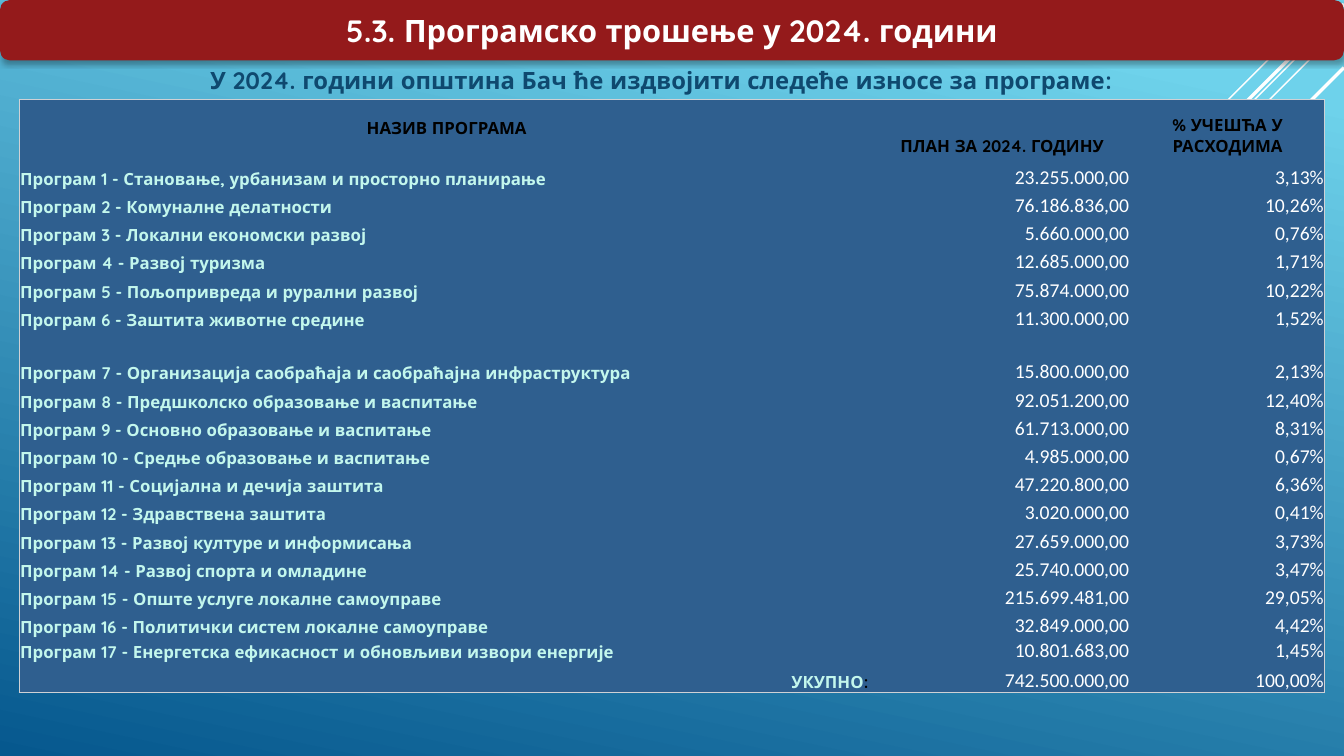
from typing import NamedTuple

from lxml.etree import SubElement
from pptx import Presentation
from pptx.dml.color import RGBColor
from pptx.enum.shapes import MSO_CONNECTOR, MSO_SHAPE
from pptx.enum.text import MSO_ANCHOR, PP_ALIGN
from pptx.oxml import parse_xml
from pptx.oxml.ns import nsdecls, qn
from pptx.util import Inches, Pt

COLORS = {
    "sky": "6ED2EB", "deep": "06588E", "banner": "941A1B", "subtitle": "0F496F",
    "table": "2F5F8F", "border": "CFD1D5", "mint": "C3F7ED",
    "white": "FFFFFF", "black": "000000",
}


class Style(NamedTuple):
    size: float
    color: str
    font: str = "Quicksand"
    bold: bool = True


class Ray(NamedTuple):
    """A 45-degree line running down and to the left."""
    x: float
    y: float
    run: float
    width: float


class Program(NamedTuple):
    name: str
    amount: str
    share: str


TITLE = Style(22, "white")
SUBTITLE = Style(17, "subtitle")
HEADER = Style(12, "black")
NAME = Style(12, "mint")
VALUE = Style(14, "white", "Calibri", False)

RAYS = [
    Ray(13.16, 0.01, 4.16, 1),
    Ray(13.33, 0.1, 6.65, 1),
    Ray(13.33, 0.25, 5.42, 1),
    Ray(13.33, 0.04, 5.3, 2.5),
    Ray(13.33, 0.67, 4.75, 2.5),
]

HEADINGS = ["НАЗИВ ПРОГРАМА", "ПЛАН ЗА 2024. ГОДИНУ", "% УЧЕШЋА У РАСХОДИМА"]
PROGRAMS = [
    Program("Становање, урбанизам и просторно планирање", "23.255.000,00", "3,13%"),
    Program("Комуналне делатности", "76.186.836,00", "10,26%"),
    Program("Локални економски развој", "5.660.000,00", "0,76%"),
    Program("Развој туризма", "12.685.000,00", "1,71%"),
    Program("Пољопривреда и рурални развој", "75.874.000,00", "10,22%"),
    Program("Заштита животне средине", "11.300.000,00", "1,52%"),
    Program("Организација саобраћаја и саобраћајна инфраструктура", "15.800.000,00", "2,13%"),
    Program("Предшколско образовање и васпитање", "92.051.200,00", "12,40%"),
    Program("Основно образовање и васпитање", "61.713.000,00", "8,31%"),
    Program("Средње образовање и васпитање", "4.985.000,00", "0,67%"),
    Program("Социјална и дечија заштита", "47.220.800,00", "6,36%"),
    Program("Здравствена заштита", "3.020.000,00", "0,41%"),
    Program("Развој културе и информисања", "27.659.000,00", "3,73%"),
    Program("Развој спорта и омладине", "25.740.000,00", "3,47%"),
    Program("Опште услуге локалне самоуправе", "215.699.481,00", "29,05%"),
    Program("Политички систем локалне самоуправе", "32.849.000,00", "4,42%"),
    Program("Енергетска ефикасност и обновљиви извори енергије", "10.801.683,00", "1,45%"),
]
TOTAL = Program("УКУПНО", "742.500.000,00", "100,00%")

COL_WIDTHS = [8.48, 2.54, 1.93]
ROW_HEIGHT = 0.28
SPECIAL_ROWS = {0: 0.56, 1: 0.33, 7: 0.53, 17: 0.25, 18: 0.29}


def rgb(name: str) -> RGBColor:
    return RGBColor.from_string(COLORS[name])


def add_run(p, text: str, style: Style) -> None:
    r = p.add_run()
    r.text = text
    r.font.name = style.font
    r.font.size = Pt(style.size)
    r.font.bold = style.bold
    r.font.color.rgb = rgb(style.color)


def set_background(slide) -> None:
    fill = slide.background.fill
    fill.gradient()
    fill.gradient_angle = 258
    for stop, color, position in zip(fill.gradient_stops, ("sky", "deep"), (0.1, 1)):
        stop.color.rgb = rgb(color)
        stop.position = position


def add_ray(slide, ray: Ray) -> None:
    line = slide.shapes.add_connector(
        MSO_CONNECTOR.STRAIGHT, Inches(ray.x), Inches(ray.y),
        Inches(ray.x - ray.run), Inches(ray.y + ray.run))
    line.line.color.rgb = rgb("white")
    line.line.width = Pt(ray.width)
    SubElement(line._element.spPr, qn("a:effectLst"))


def add_banner(slide, width: int) -> None:
    """Draw the shadowed bar and set the title on top of it."""
    height = Inches(0.6)
    sp = slide.shapes.add_shape(MSO_SHAPE.ROUNDED_RECTANGLE, 0, 0, width, height)
    sp.fill.solid()
    sp.fill.fore_color.rgb = rgb("banner")
    sp.line.fill.background()
    sp._element.spPr.append(parse_xml(
        f'<a:effectLst {nsdecls("a")}><a:outerShdw blurRad="{Pt(3.5)}" dist="{Pt(2.2)}" '
        f'dir="5400000" rotWithShape="0"><a:srgbClr val="{COLORS["black"]}">'
        '<a:alpha val="32000"/></a:srgbClr></a:outerShdw></a:effectLst>'))

    title = slide.shapes.title
    title.left, title.top, title.width, title.height = 0, 0, width, height
    slide.shapes._spTree.append(title._element)
    tf = title.text_frame
    tf.vertical_anchor = MSO_ANCHOR.MIDDLE
    p = tf.paragraphs[0]
    p.alignment = PP_ALIGN.CENTER
    add_run(p, "5.3. Програмско трошење у 2024. години", TITLE)


def add_subtitle(slide) -> None:
    tf = slide.shapes.add_textbox(
        Inches(1.68), Inches(0.6), Inches(9.75), Inches(0.55)).text_frame
    tf.word_wrap = True
    p = tf.paragraphs[0]
    p.alignment = PP_ALIGN.CENTER
    add_run(p, "У 2024. години општина Бач ће издвојити следеће износе за програме:", SUBTITLE)


def set_borders(cell, edges: dict[str, bool]) -> None:
    """Show or hide each edge; the borders precede the fill in the cell's XML."""
    tcPr = cell._tc.get_or_add_tcPr()
    for i, (edge, shown) in enumerate(edges.items()):
        paint = (f'<a:solidFill><a:srgbClr val="{COLORS["border"]}"><a:alpha val="60000"/>'
                 '</a:srgbClr></a:solidFill>') if shown else '<a:noFill/>'
        tcPr.insert(i, parse_xml(
            f'<a:ln{edge} {nsdecls("a")} w="{Pt(0.75)}">{paint}</a:ln{edge}>'))


def fill_cell(cell, align: PP_ALIGN, runs: list[tuple[str, Style]]) -> None:
    cell.fill.solid()
    cell.fill.fore_color.rgb = rgb("table")
    cell.margin_left = cell.margin_right = cell.margin_top = Inches(0.01)
    cell.margin_bottom = 0
    cell.vertical_anchor = MSO_ANCHOR.BOTTOM
    p = cell.text_frame.paragraphs[0]
    p.alignment = align
    for text, style in runs:
        add_run(p, text, style)


def add_budget_table(slide) -> None:
    rows = len(PROGRAMS) + 2
    cols = len(COL_WIDTHS)
    heights = [SPECIAL_ROWS.get(i, ROW_HEIGHT) for i in range(rows)]
    table = slide.shapes.add_table(
        rows, cols, Inches(0.19), Inches(0.99),
        Inches(sum(COL_WIDTHS)), Inches(sum(heights))).table
    table.horz_banding = False
    for column, width in zip(table.columns, COL_WIDTHS):
        column.width = Inches(width)
    for row, height in zip(table.rows, heights):
        row.height = Inches(height)

    for c, heading in enumerate(HEADINGS):
        fill_cell(table.cell(0, c), PP_ALIGN.CENTER, [(heading, HEADER)])
    table.cell(0, 0).vertical_anchor = MSO_ANCHOR.MIDDLE

    for i, program in enumerate(PROGRAMS, 1):
        fill_cell(table.cell(i, 0), PP_ALIGN.LEFT, [(f"Програм {i} - {program.name}", NAME)])
    fill_cell(table.cell(rows - 1, 0), PP_ALIGN.RIGHT, [(TOTAL.name, NAME), (": ", HEADER)])
    for i, program in enumerate([*PROGRAMS, TOTAL], 1):
        for c, value in enumerate((program.amount, program.share), 1):
            fill_cell(table.cell(i, c), PP_ALIGN.RIGHT, [(value, VALUE)])

    for i in range(rows):
        for c in range(cols):
            set_borders(table.cell(i, c), {
                "L": c == 0, "R": c == cols - 1, "T": i == 0, "B": i == rows - 1})


def main() -> None:
    prs = Presentation()
    prs.slide_width, prs.slide_height = Inches(13.33), Inches(7.5)
    slide = prs.slides.add_slide(prs.slide_layouts[5])
    set_background(slide)
    for ray in RAYS:
        add_ray(slide, ray)
    add_subtitle(slide)
    add_banner(slide, prs.slide_width)
    add_budget_table(slide)
    prs.save("out.pptx")


if __name__ == "__main__":
    main()
